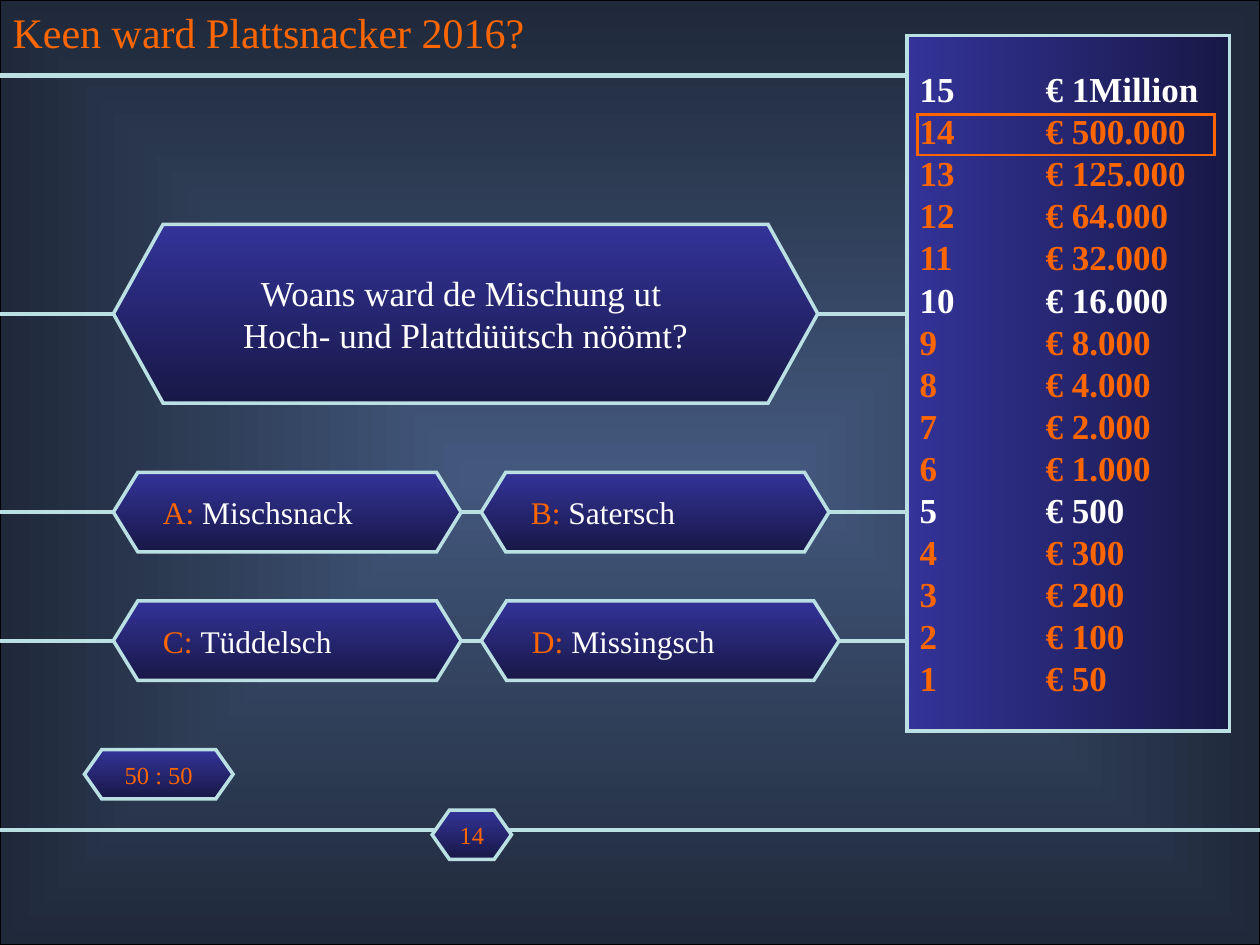
from lxml.etree import SubElement
from pptx import Presentation
from pptx.dml.color import RGBColor
from pptx.enum.shapes import MSO_CONNECTOR, MSO_SHAPE
from pptx.enum.text import MSO_ANCHOR as ANCHOR, MSO_AUTO_SIZE as AUTO, PP_ALIGN as ALIGN
from pptx.oxml import parse_xml
from pptx.oxml.ns import nsdecls, qn
from pptx.util import Inches, Pt

FONT = "Times New Roman"
ORANGE, WHITE, BLACK, PALE = "FF6600", "FFFFFF", "000000", "BBE0E3"
BLUES = ("333399", "181847")
SLATES = ("43587D", "1F293A")
DOWN = '<a:lin ang="5400000" scaled="1"/>'
ACROSS = '<a:lin ang="0" scaled="1"/>'
FROM_CENTRE = ('<a:path path="shape"><a:fillToRect l="50000" t="50000" '
               'r="50000" b="50000"/></a:path>')


def rgb(value):
    return RGBColor.from_string(value)


def gradient_fill(sp, colors, direction):
    sp.fill.gradient()
    old = sp._element.spPr.find(qn("a:gradFill"))
    start, end = colors
    new = parse_xml(
        f'<a:gradFill {nsdecls("a")} rotWithShape="1"><a:gsLst>'
        f'<a:gs pos="0"><a:srgbClr val="{start}"/></a:gs>'
        f'<a:gs pos="100000"><a:srgbClr val="{end}"/></a:gs>'
        f'</a:gsLst>{direction}</a:gradFill>')
    old.getparent().replace(old, new)


def add_run(p, text, size=18, color=WHITE, bold=False):
    r = p.add_run()
    r.text = text
    r.font.name, r.font.size, r.font.bold = FONT, Pt(size), bold
    r.font.color.rgb = rgb(color)


def add_tab_stop(p, position):
    tabs = SubElement(p._p.get_or_add_pPr(), qn("a:tabLst"))
    SubElement(tabs, qn("a:tab"), pos=str(Inches(position)), algn="l")


def write(tf, lines, size=18, bold=False, align=ALIGN.LEFT, anchor=ANCHOR.MIDDLE,
          wrap=False, tab=None):
    """Write lines, each a list of (text, colour) runs."""
    tf.word_wrap, tf.vertical_anchor = wrap, anchor
    for i, runs in enumerate(lines):
        p = tf.add_paragraph() if i else tf.paragraphs[0]
        p.alignment = align
        if tab:
            add_tab_stop(p, tab)
        for text, color in runs:
            add_run(p, text, size=size, color=color, bold=bold)


class QuizSlide:
    def __init__(self, prs):
        self.s = prs.slides.add_slide(prs.slide_layouts[5])

    def shape(self, kind, box, line, width, fill=None, direction=DOWN):
        sp = self.s.shapes.add_shape(kind, *map(Inches, box))
        sp.shadow.inherit = False
        sp.line.color.rgb, sp.line.width = rgb(line), Pt(width)
        SubElement(sp._element.spPr.find(qn("a:ln")), qn("a:miter"), lim="800000")
        if fill:
            gradient_fill(sp, fill, direction)
        else:
            sp.fill.background()
        return sp

    def rect(self, box, line=PALE, width=2, **fill):
        return self.shape(MSO_SHAPE.RECTANGLE, box, line, width, **fill)

    def hexagon(self, box, adj, lines, **fmt):
        sp = self.shape(MSO_SHAPE.HEXAGON, box, PALE, 2, fill=BLUES)
        sp.adjustments[0] = adj
        write(sp.text_frame, lines, **fmt)

    def rule(self, left, y, width=2.25):
        ends = map(Inches, (left, y, left + 10, y))
        line = self.s.shapes.add_connector(MSO_CONNECTOR.STRAIGHT, *ends)
        line.line.color.rgb, line.line.width = rgb(PALE), Pt(width)
        SubElement(line._element.spPr, qn("a:effectLst"))

    def title(self, text, box):
        sp = self.s.shapes.title
        sp.left, sp.top, sp.width, sp.height = map(Inches, box)
        write(sp.text_frame, [[(text, ORANGE)]], size=24, anchor=ANCHOR.TOP, wrap=True)
        sp.text_frame.auto_size = AUTO.SHAPE_TO_FIT_TEXT
        self.s.shapes._spTree.append(sp._element)  # bring to the front


def main():
    prs = Presentation()
    prs.slide_width, prs.slide_height = Inches(10), Inches(7.5)
    quiz = QuizSlide(prs)

    quiz.rect((0, 0, 10, 7.5), line=BLACK, width=0.75, fill=SLATES, direction=FROM_CENTRE)
    for left, y in [(0, 6.59), (-0.48, 5.09), (-0.49, 4.06), (-0.57, 2.49)]:
        quiz.rule(left, y)
    quiz.rule(-0.28, 0.6, width=3)

    question = ["Woans ward de Mischung ut ", "Hoch- und Plattdüütsch nöömt?"]
    quiz.hexagon((0.9, 1.78, 5.59, 1.42), 0.278, [[(t, WHITE)] for t in question],
                 size=20, align=ALIGN.CENTER)

    answers = [("A", "Mischsnack", 0.9, 3.75, 2.76, 0.308),
               ("B", "Satersch", 3.82, 3.75, 2.76, 0.308),
               ("C", "Tüddelsch", 0.9, 4.77, 2.76, 0.308),
               ("D", "Missingsch", 3.82, 4.77, 2.84, 0.318)]
    for letter, answer, left, top, width, adj in answers:
        quiz.hexagon((left, top, width, 0.63), adj,
                     [[(f"{letter}: ", ORANGE), (answer, WHITE)]])

    for text, left, top, width in [("14", 3.43, 6.43, 0.63), ("50 : 50", 0.67, 5.95, 1.18)]:
        quiz.hexagon((left, top, width, 0.39), 0.352, [[(text, ORANGE)]],
                     size=14, align=ALIGN.CENTER)

    prizes = ["50", "100", "200", "300", "500", "1.000", "2.000", "4.000", "8.000",
              "16.000", "32.000", "64.000", "125.000", "500.000", "1Million"]
    ladder = [[(f"{level}\t€ {prize}", ORANGE if level % 5 else WHITE)]
              for level, prize in enumerate(prizes, 1)]
    panel = quiz.rect((7.2, 0.28, 2.56, 5.52), fill=BLUES, direction=ACROSS)
    write(panel.text_frame, ladder[::-1], size=20, bold=True, tab=1)
    quiz.rect((7.28, 0.91, 2.36, 0.32), line=ORANGE, width=1.5)

    quiz.title("Keen ward Plattsnacker 2016?", (0, 0, 5.12, 0.5))
    prs.save("out.pptx")


if __name__ == "__main__":
    main()
